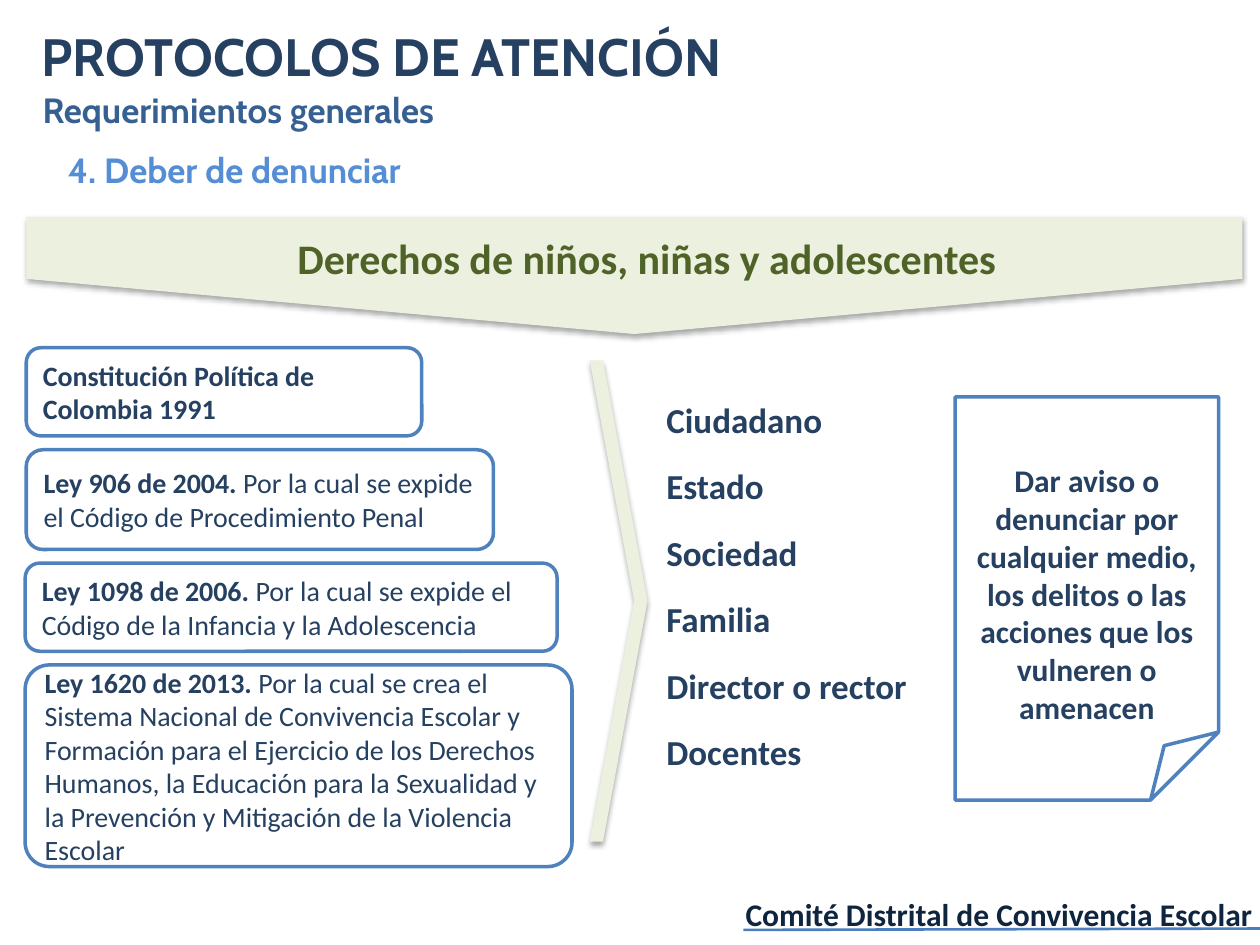
"""Build the slide on the duty to report under the care protocols."""
import pptx
import pptx.util
import pptx.dml.color
import pptx.enum.shapes
import pptx.enum.text
import pptx.oxml
import pptx.oxml.ns

Pt = pptx.util.Pt
SHAPE = pptx.enum.shapes.MSO_SHAPE
ALIGN = pptx.enum.text.PP_ALIGN
ANCHOR = pptx.enum.text.MSO_ANCHOR
NAVY, BLUE, PALE = "254061", "4F81BD", "EBF1DE"
SHADOW = (
    f'<a:effectLst {pptx.oxml.ns.nsdecls("a")}>'
    '<a:outerShdw blurRad="39370" dist="22860" dir="5400000" rotWithShape="0">'
    '<a:srgbClr val="000000"><a:alpha val="35000"/></a:srgbClr>'
    '</a:outerShdw></a:effectLst>'
)


def rgb(color):
    """Turn a hex string into a colour."""
    return pptx.dml.color.RGBColor.from_string(color)


def add_run(p, text, size, color, bold=True, font="Calibri"):
    """Append a formatted run to a paragraph."""
    r = p.add_run()
    r.text = text
    r.font.size = Pt(size)
    r.font.name = font
    r.font.bold = bold
    r.font.color.rgb = rgb(color)


prs = pptx.Presentation()
prs.slide_width, prs.slide_height = Pt(720), Pt(540)
s = prs.slides.add_slide(prs.slide_layouts[5])

title = s.shapes.title
title.left, title.top, title.width, title.height = Pt(16.6), Pt(10), Pt(631), Pt(44)
tf = title.text_frame
tf.auto_size = pptx.enum.text.MSO_AUTO_SIZE.NONE
tf.vertical_anchor = ANCHOR.TOP
tf.paragraphs[0].alignment = ALIGN.LEFT
add_run(tf.paragraphs[0], "PROTOCOLOS DE ATENCIÓN", 30, NAVY, font="Cabin")

laws = [
    (15, 198.7, 226, 50.4, "Constitución Política de Colombia 1991", ""),
    (15, 257, 267, 57, "Ley 906 de 2004. ",
     "Por la cual se expide el Código de Procedimiento Penal"),
    (14.4, 321.8, 304, 50.4, "Ley 1098 de 2006. ",
     "Por la cual se expide el Código de la Infancia y la Adolescencia"),
    (14.4, 380, 312.5, 115.2, "Ley 1620 de 2013. ",
     "Por la cual se crea el Sistema Nacional de Convivencia Escolar y Formación "
     "para el Ejercicio de los Derechos Humanos, la Educación para la Sexualidad "
     "y la Prevención y Mitigación de la Violencia Escolar"),
]
for left, top, width, height, name, purpose in laws:
    sp = s.shapes.add_shape(SHAPE.ROUNDED_RECTANGLE, Pt(left), Pt(top), Pt(width), Pt(height))
    sp.shadow.inherit = False
    sp.fill.solid()
    sp.fill.fore_color.rgb = rgb("FFFFFF")
    sp.line.color.rgb = rgb(BLUE)
    sp.line.width = Pt(2)
    sp.text_frame.vertical_anchor = ANCHOR.MIDDLE
    p = sp.text_frame.paragraphs[0]
    p.alignment = ALIGN.LEFT
    add_run(p, name, 16, NAVY)
    if purpose:
        add_run(p, purpose, 16, NAVY, bold=False)
sp.adjustments[0] = 0.12

arrows = [
    (SHAPE.PENTAGON, 329, -190, 67, 694.8, 90, 0.47),
    (SHAPE.CHEVRON, 337, 206, 33, 275, 0, 0.77),
]
for kind, left, top, width, height, angle, point in arrows:
    sp = s.shapes.add_shape(kind, Pt(left), Pt(top), Pt(width), Pt(height))
    sp.rotation = angle
    sp.adjustments[0] = point
    sp.fill.solid()
    sp.fill.fore_color.rgb = rgb(PALE)
    sp.line.fill.background()
    sp._element.spPr.append(pptx.oxml.parse_xml(SHADOW))

note = s.shapes.add_shape(SHAPE.FOLDED_CORNER, Pt(545.8), Pt(226.8), Pt(150.5), Pt(230.4))
note.shadow.inherit = False
note._element.prstGeom.rewrite_guides([("adj", 25800)])
note.fill.background()
note.line.color.rgb = rgb(BLUE)
note.line.width = Pt(2)
note.text_frame.vertical_anchor = ANCHOR.BOTTOM
p = note.text_frame.paragraphs[0]
p.alignment = ALIGN.CENTER
add_run(p, "Dar aviso o denunciar por cualquier medio, los delitos o las acciones "
        "que los vulneren o amenacen", 18, NAVY)

duty_bearers = ["Ciudadano", "Estado", "Sociedad", "Familia", "Director o rector", "Docentes"]
texts = [
    (17.3, 46.8, 407.5, 31.5, ["Requerimientos generales"], 20, "376092", "Cabin", ALIGN.LEFT),
    (31.7, 81.4, 262, 31.5, ["4. Deber de denunciar"], 20, "558ED5", "Cabin", ALIGN.LEFT),
    (147.6, 129.6, 444.2, 36, ["Derechos de niños, niñas y adolescentes"], 24, "4F6228",
     "Calibri", ALIGN.CENTER),
    (373.7, 224, 161.3, 230.4, duty_bearers, 20, NAVY, "Calibri", ALIGN.LEFT),
    (416.9, 507.6, 306, 29, ["Comité Distrital de Convivencia Escolar"], 18, "0F243E",
     "Calibri", ALIGN.RIGHT),
]
for left, top, width, height, lines, size, color, font, align in texts:
    tf = s.shapes.add_textbox(Pt(left), Pt(top), Pt(width), Pt(height)).text_frame
    tf.word_wrap = align != ALIGN.RIGHT
    for i, line in enumerate(lines):
        p = tf.add_paragraph() if i else tf.paragraphs[0]
        p.alignment = align
        p.space_before = Pt(14 if i else 0)
        add_run(p, line, size, color, font=font)

rule = s.shapes.add_connector(pptx.enum.shapes.MSO_CONNECTOR.STRAIGHT,
                              Pt(424.8), Pt(531.4), Pt(720), Pt(530.6))
rule.line.color.rgb = rgb("4B7EBC")
rule.line.width = Pt(1.5)
rule._element.spPr.append(pptx.oxml.parse_xml(f'<a:effectLst {pptx.oxml.ns.nsdecls("a")}/>'))

prs.save("out.pptx")
